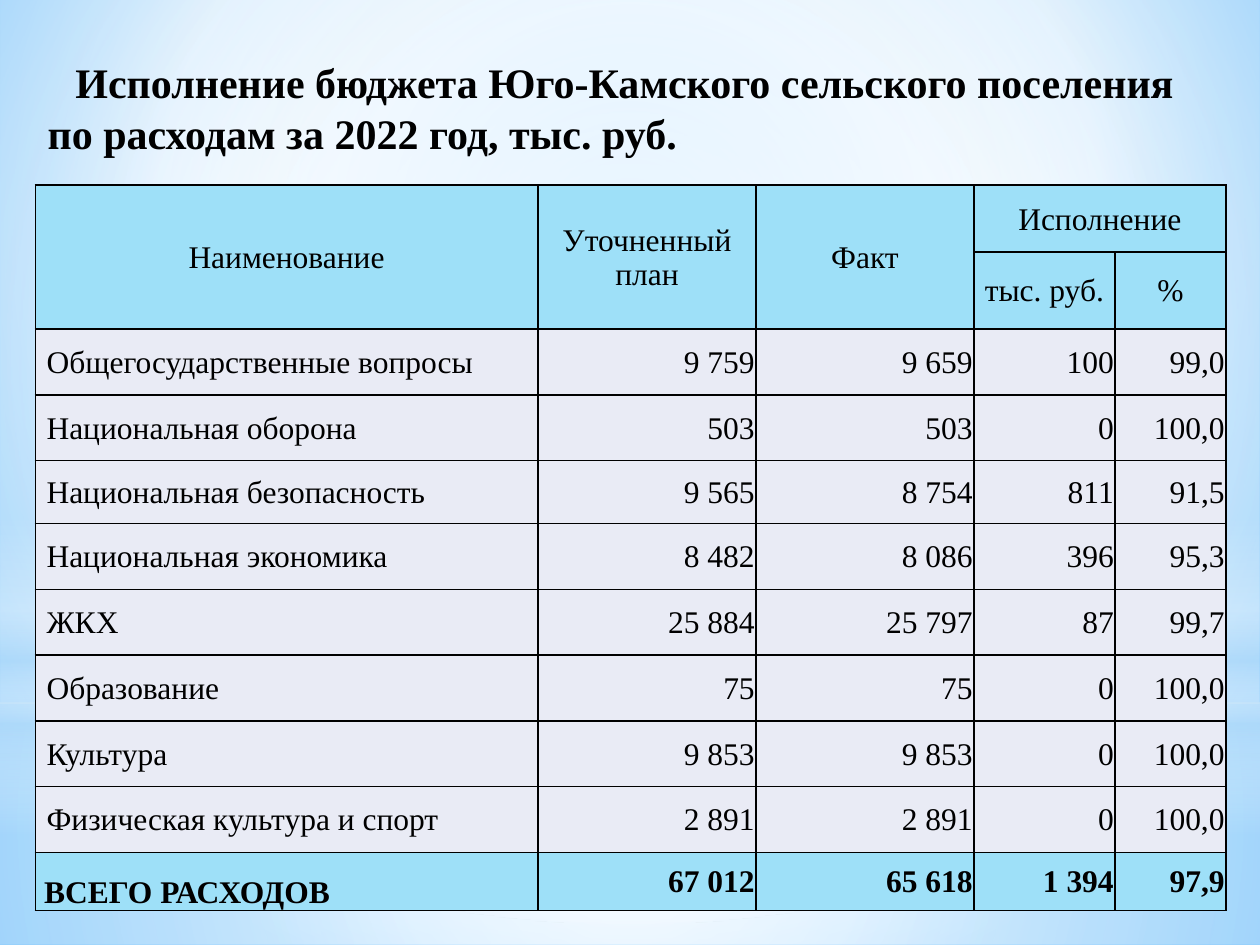
from lxml.etree import SubElement
from pptx import Presentation
from pptx.dml.color import RGBColor
from pptx.enum.shapes import MSO_SHAPE
from pptx.enum.text import MSO_ANCHOR, PP_ALIGN
from pptx.oxml.ns import qn
from pptx.util import Inches, Pt

FONT = "Times New Roman"
HEADER_FILL, BODY_FILL = "9EE0F8", "E9EBF5"

COLUMN_WEIGHTS = [3.99, 1.73, 1.73, 1.12, 0.88]
ROW_WEIGHTS = [0.53, 0.55, 0.52, 0.52, 0.5] + [0.52] * 5 + [0.46]

# Row, column, last row, last column, label
HEADERS = [
    (0, 0, 1, 0, "Наименование"),
    (0, 1, 1, 1, "Уточненный план"),
    (0, 2, 1, 2, "Факт"),
    (0, 3, 0, 4, "Исполнение"),
    (1, 3, 1, 3, "тыс. руб."),
    (1, 4, 1, 4, "%"),
]
EXPENSES = [
    ("Общегосударственные вопросы", "9 759", "9 659", "100", "99,0"),
    ("Национальная оборона", "503", "503", "0", "100,0"),
    ("Национальная безопасность", "9 565", "8 754", "811", "91,5"),
    ("Национальная экономика", "8 482", "8 086", "396", "95,3"),
    ("ЖКХ", "25 884", "25 797", "87", "99,7"),
    ("Образование", "75", "75", "0", "100,0"),
    ("Культура", "9 853", "9 853", "0", "100,0"),
    ("Физическая культура и спорт", "2 891", "2 891", "0", "100,0"),
    ("ВСЕГО РАСХОДОВ", "67 012", "65 618", "1 394", "97,9"),
]


def color(hex_code):
    return RGBColor.from_string(hex_code)


def share_box(prs, left, top, width, height):
    """Turn percentages of the slide into a box of lengths."""
    return (int(prs.slide_width * left / 100), int(prs.slide_height * top / 100),
            int(prs.slide_width * width / 100), int(prs.slide_height * height / 100))


def write(frame, text, size=18, bold=False, align=PP_ALIGN.LEFT, margin=0, first_line=0):
    frame.word_wrap = True
    paragraph = frame.paragraphs[0]
    paragraph.text = text
    paragraph.alignment = align
    properties = paragraph._p.get_or_add_pPr()
    properties.set("marL", str(Inches(margin)))
    properties.set("indent", str(Inches(first_line)))
    for run in paragraph.runs:
        run.font.name, run.font.size, run.font.bold = FONT, Pt(size), bold
        run.font.color.rgb = color("000000")


def paint_gradient(fill, owner, stops, focus=None):
    """Fill with (position, colour, alpha) stops, round a focus or downwards."""
    fill.gradient()
    gradient = owner.find(".//" + qn("a:gradFill"))
    for child in list(gradient):
        gradient.remove(child)
    stop_list = SubElement(gradient, qn("a:gsLst"))
    for position, hex_code, alpha in stops:
        stop = SubElement(stop_list, qn("a:gs"), pos=str(position * 1000))
        tone = SubElement(stop, qn("a:srgbClr"), val=hex_code)
        if alpha < 100:
            SubElement(tone, qn("a:alpha"), val=str(alpha * 1000))
    if focus:
        sides = {side: str(value * 1000) for side, value in zip("ltrb", focus)}
        path_fill = SubElement(gradient, qn("a:path"), {"path": "circle"})
        SubElement(path_fill, qn("a:fillToRect"), sides)
    else:
        SubElement(gradient, qn("a:lin"), ang="5400000", scaled="0")


def add_glow(slide, box, stops, preset=MSO_SHAPE.RECTANGLE, focus=(50, 50, 50, 50)):
    glow = slide.shapes.add_shape(preset, *box)
    glow.shadow.inherit = False
    glow.line.fill.background()
    paint_gradient(glow.fill, glow._element, stops, focus)


def add_backdrop(prs, slide):
    white, sky = "FFFFFF", "B4DCFA"
    paint_gradient(slide.background.fill, slide.element,
                   [(0, "9ED5FF", 100), (60, white, 100), (100, "5BB9FF", 100)],
                   (20, 10, 20, 60))
    # Lower and upper glow
    add_glow(slide, share_box(prs, 0, 74.4, 100, 25.6),
             [(0, white, 91), (37, white, 76), (100, sky, 79)])
    add_glow(slide, share_box(prs, 0, 0, 100, 74.4),
             [(0, white, 89), (48, white, 62), (100, sky, 79)])
    # Horizon band
    add_glow(slide, share_box(prs, 0, 54.9, 100, 33.3),
             [(0, white, 0), (29, white, 30), (45, sky, 40),
              (55, white, 26), (65, sky, 60), (100, white, 0)], focus=None)
    # Central light
    add_glow(slide, share_box(prs, 0, 23.3, 100, 74.4),
             [(0, white, 100), (56, white, 0)], MSO_SHAPE.OVAL)


def add_title(slide, box):
    frame = slide.shapes.add_textbox(*box).text_frame
    frame.margin_top = Inches(0.09)
    write(frame, "Исполнение бюджета Юго-Камского сельского поселения\v"
                 "по расходам за 2022 год, тыс. руб.",
          size=24, bold=True, first_line=0.22)


def style_cell(cell, fill, anchor=MSO_ANCHOR.MIDDLE):
    cell.margin_left = cell.margin_top = cell.margin_right = Inches(0.01)
    cell.margin_bottom = 0
    cell.vertical_anchor = anchor
    cell.fill.solid()
    cell.fill.fore_color.rgb = color(fill)
    properties = cell._tc.get_or_add_tcPr()
    for index, side in enumerate(("lnL", "lnR", "lnT", "lnB")):
        border = SubElement(properties, qn("a:" + side), w=str(Pt(1)))
        solid = SubElement(border, qn("a:solidFill"))
        SubElement(solid, qn("a:srgbClr"), val="000000")
        properties.insert(index, border)


def add_expense_table(slide, box):
    row_count, column_count = len(ROW_WEIGHTS), len(COLUMN_WEIGHTS)
    table = slide.shapes.add_table(row_count, column_count, *box).table
    table.first_row = table.horz_banding = False
    for column, weight in zip(table.columns, COLUMN_WEIGHTS):
        column.width = int(box[2] * weight / sum(COLUMN_WEIGHTS))
    for row, weight in zip(table.rows, ROW_WEIGHTS):
        row.height = int(box[3] * weight / sum(ROW_WEIGHTS))

    # Two-level header
    for row in range(2):
        for column in range(column_count):
            style_cell(table.cell(row, column), HEADER_FILL)
    for row, column, last_row, last_column, label in HEADERS:
        cell = table.cell(row, column)
        if (row, column) != (last_row, last_column):
            cell.merge(table.cell(last_row, last_column))
        write(cell.text_frame, label, align=PP_ALIGN.CENTER)

    # Expense rows, with the total last
    for row, values in enumerate(EXPENSES, start=2):
        total = row == row_count - 1
        for column, value in enumerate(values):
            cell = table.cell(row, column)
            name = column == 0
            style_cell(cell, HEADER_FILL if total else BODY_FILL,
                       MSO_ANCHOR.BOTTOM if total and name else MSO_ANCHOR.MIDDLE)
            write(cell.text_frame, value, bold=total,
                  align=PP_ALIGN.LEFT if name else PP_ALIGN.RIGHT,
                  margin=(0.06 if total else 0.08) if name else 0)


def main():
    prs = Presentation()
    prs.slide_width, prs.slide_height = Inches(10), Inches(7.5)
    slide = prs.slides.add_slide(prs.slide_layouts[6])
    add_backdrop(prs, slide)
    add_title(slide, share_box(prs, 2.8, 4.8, 94.5, 9.5))
    add_expense_table(slide, share_box(prs, 2.8, 19.6, 94.5, 76))
    prs.save("out.pptx")


if __name__ == "__main__":
    main()
